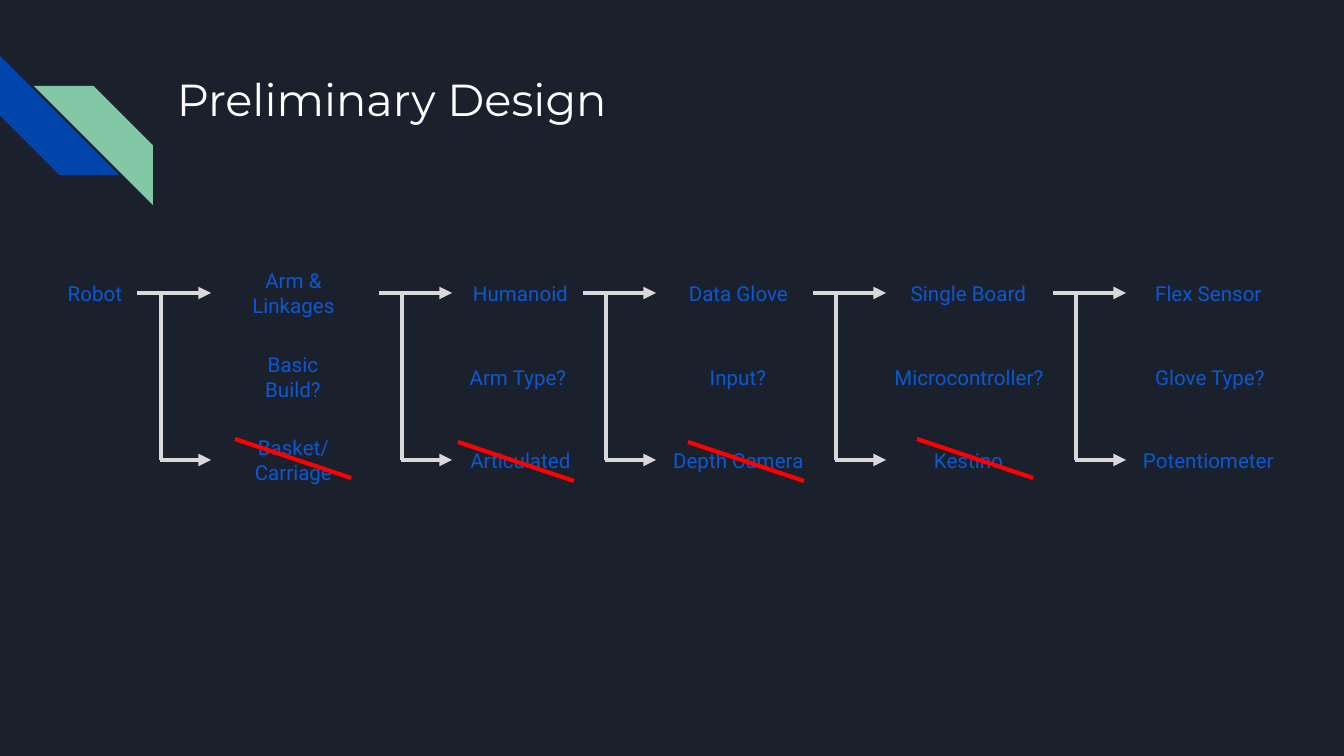
"""Build the preliminary design slide: a chain of robot design decisions."""
from typing import NamedTuple, Optional

from lxml import etree
from pptx import Presentation
from pptx import util as u
from pptx.dml.color import RGBColor
from pptx.enum import shapes, text
from pptx.oxml import ns

EMU_PER_PX = 914400 / 134.4
BACKGROUND, BLUE, GREEN = "1B212C", "0145AC", "82C7A5"
WHITE, LABEL, BRANCH, STRIKE = "FFFFFF", "0C58D3", "D9D9D9", "FF0000"
CHOSEN_TOP, QUESTION_TOP, OTHER_TOP, BOX_HEIGHT = 275, 359, 442, 36
CHOSEN_Y, OTHER_Y = CHOSEN_TOP + BOX_HEIGHT // 2, OTHER_TOP + BOX_HEIGHT // 2
STEM, SPINE = 73, 50
STRIKE_WIDTH, STRIKE_HEIGHT = 116, 39
INSET = 13


class Point(NamedTuple):
    x: int
    y: int


class Decision(NamedTuple):
    left: int
    width: int
    question_left: int
    question_width: int
    chosen: str
    question: str
    other: str
    strike: Optional[Point]


DECISIONS = [
    Decision(211, 165, 228, 130, "Arm & Linkages", "Basic Build?", "Basket/\nCarriage", Point(235, 439)),
    Decision(452, 137, 453, 130, "Humanoid", "Arm Type?", "Articulated", Point(458, 442)),
    Decision(656, 165, 648, 180, "Data Glove", "Input?", "Depth Camera", Point(688, 442)),
    Decision(886, 165, 879, 180, "Single Board", "Microcontroller?", "Kestino", Point(917, 439)),
    Decision(1126, 165, 1120, 180, "Flex Sensor", "Glove Type?", "Potentiometer", None),
]


def px(length: int) -> u.Emu:
    return u.Emu(round(length * EMU_PER_PX))


def rgb(value: str) -> RGBColor:
    return RGBColor.from_string(value)


def set_text(shape, words: str, font_name: str, size: int, color: str, align, anchor) -> None:
    frame = shape.text_frame
    frame.text = words
    frame.word_wrap = True
    frame.vertical_anchor = anchor
    frame.margin_left = frame.margin_right = frame.margin_top = frame.margin_bottom = px(INSET)
    for paragraph in frame.paragraphs:
        paragraph.alignment = align
        paragraph.font.name = font_name
        paragraph.font.size = u.Pt(size)
        paragraph.font.color.rgb = rgb(color)


def add_stripe(slide, left: int, top: int, color: str):
    stripe = slide.shapes.add_shape(
        shapes.MSO_SHAPE.DIAGONAL_STRIPE, px(left), px(top), px(119), px(119))
    stripe.shadow.inherit = False
    stripe.fill.solid()
    stripe.fill.fore_color.rgb = rgb(color)
    stripe.line.fill.background()
    return stripe


def add_label(slide, left: int, top: int, width: int, words: str, align=text.PP_ALIGN.CENTER):
    label = slide.shapes.add_shape(
        shapes.MSO_SHAPE.ROUNDED_RECTANGLE, px(left), px(top), px(width), px(BOX_HEIGHT))
    label.shadow.inherit = False
    label.fill.background()
    label.line.fill.background()
    set_text(label, words, "Roboto", 11, LABEL, align, text.MSO_ANCHOR.MIDDLE)
    return label


def add_line(slide, start: Point, end: Point, color: str, target=None):
    line = slide.shapes.add_connector(
        shapes.MSO_CONNECTOR.STRAIGHT, px(start.x), px(start.y), px(end.x), px(end.y))
    line.line.color.rgb = rgb(color)
    line.line.width = u.Pt(2.25)
    if target is not None:
        line.end_connect(target, 1)
        etree.SubElement(line.line._get_or_add_ln(), ns.qn("a:tailEnd"), type="triangle")
    etree.SubElement(line._element.spPr, ns.qn("a:effectLst"))
    return line


def add_decision(slide, decision: Decision):
    left, width = decision.left, decision.width
    spine = left - SPINE
    chosen = add_label(slide, left, CHOSEN_TOP, width, decision.chosen)
    add_label(slide, decision.question_left, QUESTION_TOP, decision.question_width, decision.question)
    other = add_label(slide, left, OTHER_TOP, width, decision.other)
    stem = add_line(slide, Point(left - STEM, CHOSEN_Y), Point(left, CHOSEN_Y), BRANCH, chosen)
    add_line(slide, Point(spine, CHOSEN_Y), Point(spine, OTHER_Y), BRANCH)
    add_line(slide, Point(spine - 1, OTHER_Y), Point(left, OTHER_Y), BRANCH, other)
    if decision.strike:
        x, y = decision.strike
        add_line(slide, decision.strike, Point(x + STRIKE_WIDTH, y + STRIKE_HEIGHT), STRIKE)
    return stem


def main() -> None:
    deck = Presentation()
    deck.slide_width, deck.slide_height = px(1344), px(756)
    slide = deck.slides.add_slide(deck.slide_layouts[6])
    slide.background.fill.solid()
    slide.background.fill.fore_color.rgb = rgb(BACKGROUND)

    add_stripe(slide, 0, 56, BLUE).rotation = 270
    green_stripe = add_stripe(slide, 34, 86, GREEN)
    green_stripe._element.spPr.xfrm.set("flipH", "1")

    title = slide.shapes.add_textbox(px(164), px(59), px(1035), px(134))
    set_text(title, "Preliminary Design", "Montserrat", 24, WHITE,
             text.PP_ALIGN.LEFT, text.MSO_ANCHOR.TOP)

    robot = add_label(slide, 44, CHOSEN_TOP, 93, "Robot", text.PP_ALIGN.RIGHT)
    stems = [add_decision(slide, decision) for decision in DECISIONS]
    stems[0].begin_connect(robot, 3)

    deck.save("out.pptx")


if __name__ == "__main__":
    main()
